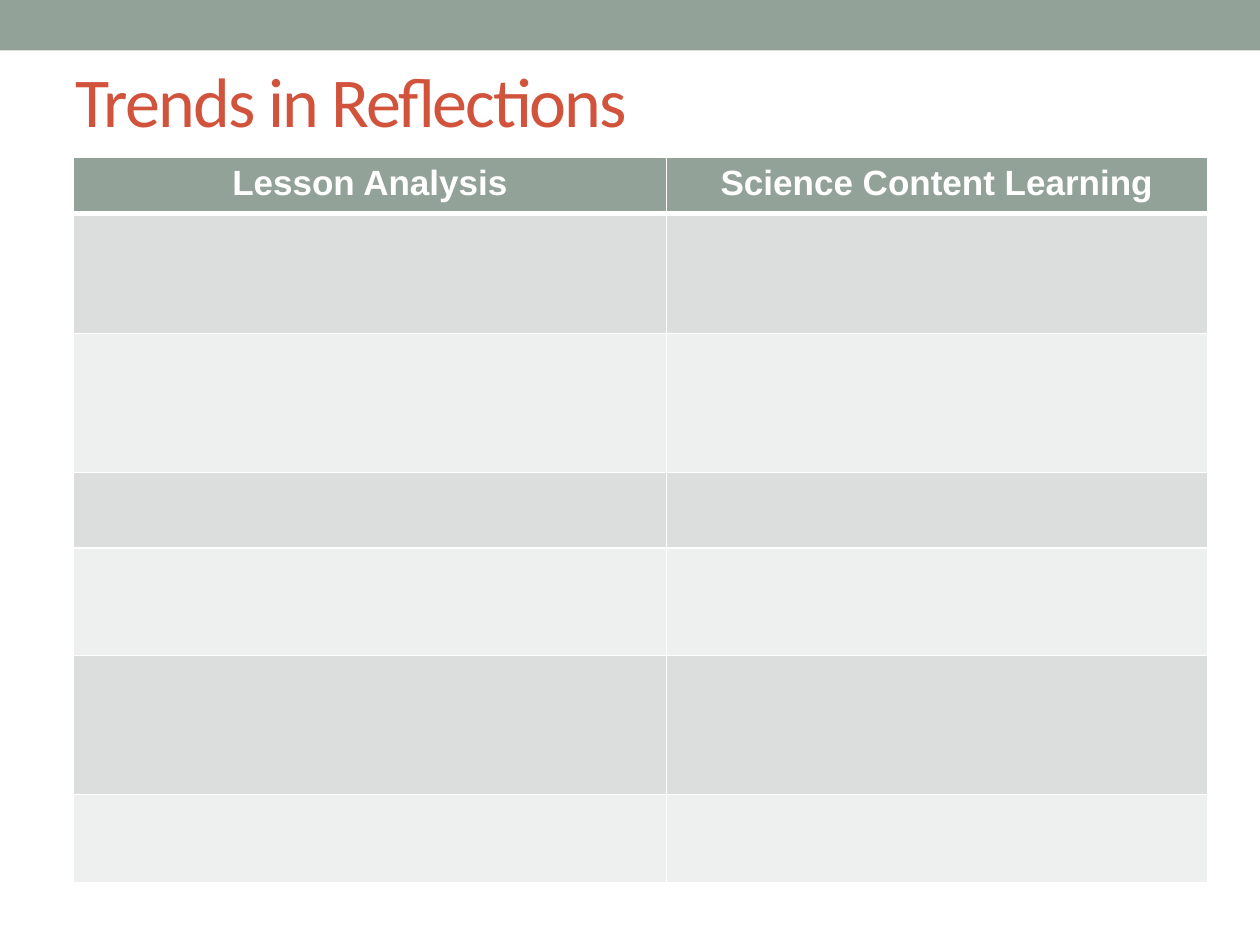
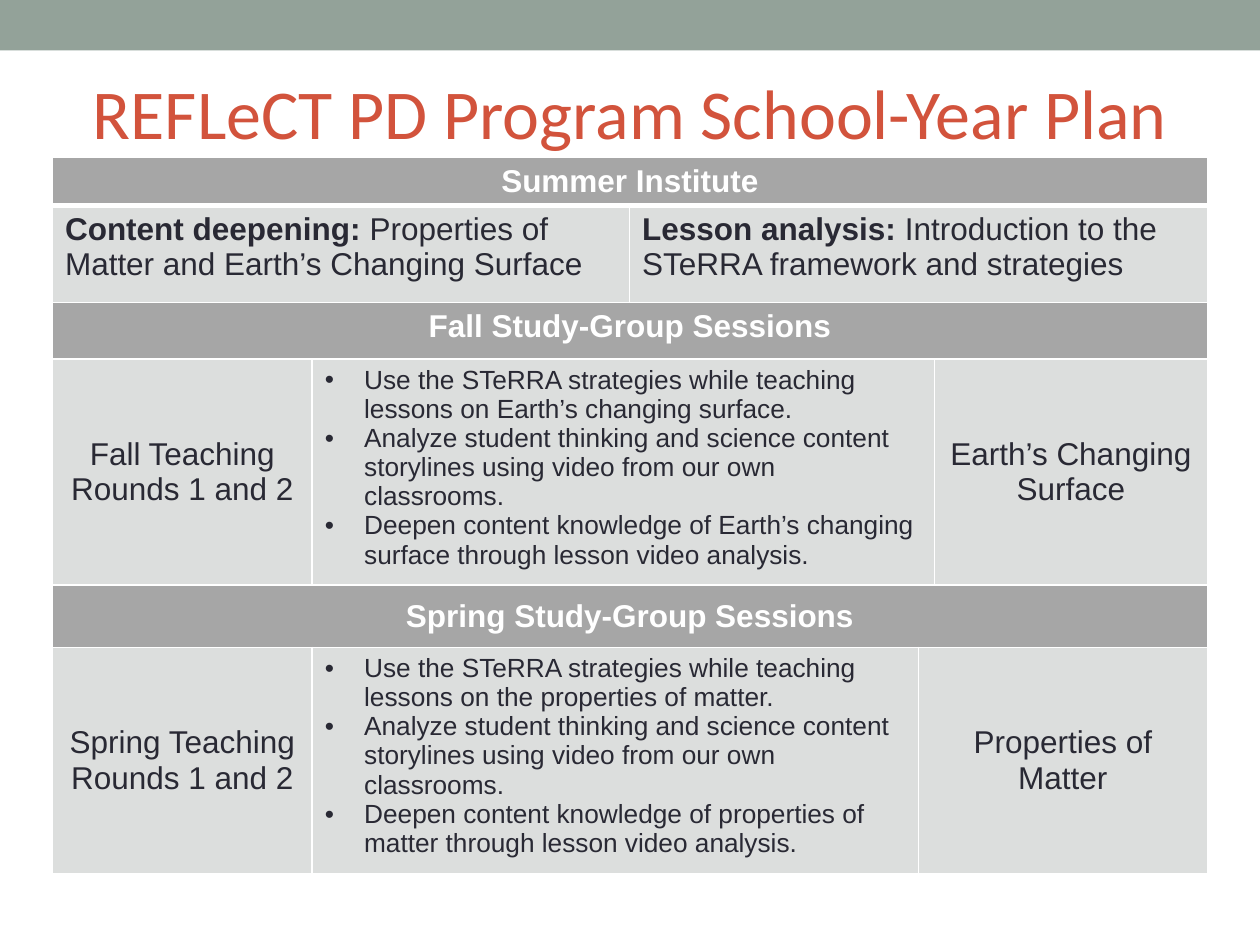
import pptx
import pptx.util
import pptx.dml.color
import pptx.enum.shapes
import pptx.enum.text
import pptx.oxml
import pptx.oxml.ns
from dataclasses import dataclass

Pt = pptx.util.Pt
ALIGN = pptx.enum.text.PP_ALIGN
ANCHOR = pptx.enum.text.MSO_ANCHOR


@dataclass(frozen=True)
class Theme:
    band: str = "93A299"
    title: str = "D2533C"
    white: str = "FFFFFF"
    ink: str = "292934"
    gray: str = "A6A6A6"
    dark_row: str = "DCDEDD"
    light_row: str = "EEF0EF"
    title_font: str = "Calibri"
    body_font: str = "Arial"
    title_size: float = 40
    header_size: float = 20
    text_size: float = 18
    list_size: float = 15


THEME = Theme()
SLIDE_SIZE = (720, 540)
BAND_HEIGHT = 28.8
TABLE_TOP = 90
BULLET_INDENT = 22.5

CELL_STYLES = {
    "column": dict(size=THEME.header_size, color=THEME.white, bold=True,
                   align=ALIGN.CENTER, fill=THEME.band),
    "heading": dict(color=THEME.white, bold=True, align=ALIGN.CENTER, fill=THEME.gray),
    "middle heading": dict(color=THEME.white, bold=True, align=ALIGN.CENTER,
                           fill=THEME.gray, anchor=ANCHOR.MIDDLE),
    "focus": dict(),
    "label": dict(align=ALIGN.CENTER, anchor=ANCHOR.MIDDLE),
    "list": dict(size=THEME.list_size, bullet=True),
}

REFLECTIONS = dict(
    title="Trends in Reflections",
    title_box=(36, 24, 648, 66),
    title_format=dict(align=ALIGN.LEFT, anchor=ANCHOR.MIDDLE, tracking=-100),
    left=42,
    columns=(338.8, 309.2),
    rows=(32.2, 68.4, 79.5, 43.2, 61.2, 79.4, 50.6),
    fills=(THEME.dark_row, THEME.light_row),
    cells=[
        (0, 0, 1, "column", ["Lesson Analysis"]),
        (0, 1, 1, "column", ["Science Content Learning"]),
    ],
)


def session_row(row, season, topic, phrase, list_span):
    return [
        (row, 0, 1, "label", [f"{season} Teaching", "Rounds 1 and 2"]),
        (row, 1, list_span, "list", [
            f"Use the STeRRA strategies while teaching lessons on {phrase}.",
            "Analyze student thinking and science content storylines "
            "using video from our own classrooms.",
            f"Deepen content knowledge of {phrase.removeprefix('the ')} "
            "through lesson video analysis.",
        ]),
        (row, 1 + list_span, 4 - list_span, "label", [topic]),
    ]


SCHOOL_YEAR = dict(
    title="REFLeCT PD Program School-Year Plan",
    title_box=(36, 36, 648, 54),
    title_format=dict(align=ALIGN.CENTER, anchor=ANCHOR.TOP, tracking=0),
    left=30,
    columns=(148.4, 181.4, 165, 9.2, 156),
    rows=(27, 55.4, 32.4, 129.2, 35.6, 129.4),
    fills=(THEME.dark_row,),
    cells=[
        (0, 0, 5, "heading", ["Summer Institute"]),
        (1, 0, 2, "focus", [("Content deepening: ",
                             "Properties of Matter and Earth’s Changing Surface")]),
        (1, 2, 3, "focus", [("Lesson analysis: ",
                             "Introduction to the STeRRA framework and strategies")]),
        (2, 0, 5, "heading", ["Fall Study-Group Sessions"]),
        *session_row(3, "Fall", "Earth’s Changing Surface", "Earth’s changing surface", 3),
        (4, 0, 5, "middle heading", ["Spring Study-Group Sessions"]),
        *session_row(5, "Spring", "Properties of Matter", "the properties of matter", 2),
    ],
)


def apply(target, **values):
    for name, value in values.items():
        setattr(target, name, value)


def paint(fill, color):
    fill.solid()
    fill.fore_color.rgb = pptx.dml.color.RGBColor.from_string(color)


def add_span(para, text, color, **values):
    span = para.add_run()
    span.text = text
    apply(span.font, **values)
    span.font.color.rgb = pptx.dml.color.RGBColor.from_string(color)
    return span


def add_xml(parent, text):
    namespace = pptx.oxml.ns.nsdecls("a")
    parent.append(pptx.oxml.parse_xml(text.replace(" ", f" {namespace} ", 1)))


def add_band(page):
    band = page.shapes.add_shape(
        pptx.enum.shapes.MSO_SHAPE.RECTANGLE, 0, 0, Pt(SLIDE_SIZE[0]), Pt(BAND_HEIGHT))
    band.shadow.inherit = False
    paint(band.fill, THEME.band)
    band.line.fill.background()


def add_title(page, text, bounds, align, anchor, tracking):
    box = page.shapes.title
    apply(box, **dict(zip(("left", "top", "width", "height"), map(Pt, bounds))))
    apply(box.text_frame, word_wrap=True, vertical_anchor=anchor,
          auto_size=pptx.enum.text.MSO_AUTO_SIZE.NONE)
    para = box.text_frame.paragraphs[0]
    para.alignment = align
    span = add_span(para, text, THEME.title, name=THEME.title_font, size=Pt(THEME.title_size))
    span._r.get_or_add_rPr().set("spc", str(tracking))


def set_borders(cell, row):
    properties = cell._tc.get_or_add_tcPr()
    widths = dict(L=1, R=1, T=3 if row == 1 else 1, B=3 if row == 0 else 1)
    for side, width in widths.items():
        add_xml(properties, f'<a:ln{side} w="{Pt(width)}"><a:solidFill>'
                            f'<a:srgbClr val="{THEME.white}"/></a:solidFill></a:ln{side}>')


def fill_cell(cell, lines, size=THEME.text_size, color=THEME.ink, bold=False,
              align=ALIGN.LEFT, anchor=ANCHOR.TOP, fill=THEME.dark_row, bullet=False):
    cell.vertical_anchor = anchor
    paint(cell.fill, fill)
    for index, line in enumerate(lines):
        frame = cell.text_frame
        para = frame.add_paragraph() if index else frame.paragraphs[0]
        para.alignment = align
        parts = [(line, bold)] if isinstance(line, str) else zip(line, (True, False))
        for text, weight in parts:
            add_span(para, text, color, name=THEME.body_font, size=Pt(size), bold=weight)
        if bullet:
            properties = para._p.get_or_add_pPr()
            properties.set("marL", str(Pt(BULLET_INDENT)))
            properties.set("indent", str(-Pt(BULLET_INDENT)))
            add_xml(properties, '<a:buFont typeface="Arial"/>')
            add_xml(properties, '<a:buChar char="•"/>')


def add_grid(page, left, columns, rows, fills, cells):
    frame = page.shapes.add_table(
        len(rows), len(columns), Pt(left), Pt(TABLE_TOP), Pt(sum(columns)), Pt(sum(rows)))
    table = frame.table
    apply(table, first_row=False, horz_banding=False)
    for column, width in zip(table.columns, columns):
        column.width = Pt(width)
    for index, (row, height) in enumerate(zip(table.rows, rows)):
        row.height = Pt(height)
        for cell in row.cells:
            set_borders(cell, index)
            paint(cell.fill, fills[(index - 1) % len(fills)])
    for row, column, span, style, lines in cells:
        cell = table.cell(row, column)
        if span > 1:
            cell.merge(table.cell(row, column + span - 1))
        fill_cell(cell, lines, **CELL_STYLES[style])


def main():
    deck = pptx.Presentation()
    apply(deck, **dict(zip(("slide_width", "slide_height"), map(Pt, SLIDE_SIZE))))
    title_only = deck.slide_layouts.get_by_name("Title Only")
    for content in (REFLECTIONS, SCHOOL_YEAR):
        page = deck.slides.add_slide(title_only)
        add_band(page)
        add_title(page, content["title"], content["title_box"], **content["title_format"])
        add_grid(page, *(content[key] for key in ("left", "columns", "rows", "fills", "cells")))
    deck.save("out.pptx")


if __name__ == "__main__":
    main()
